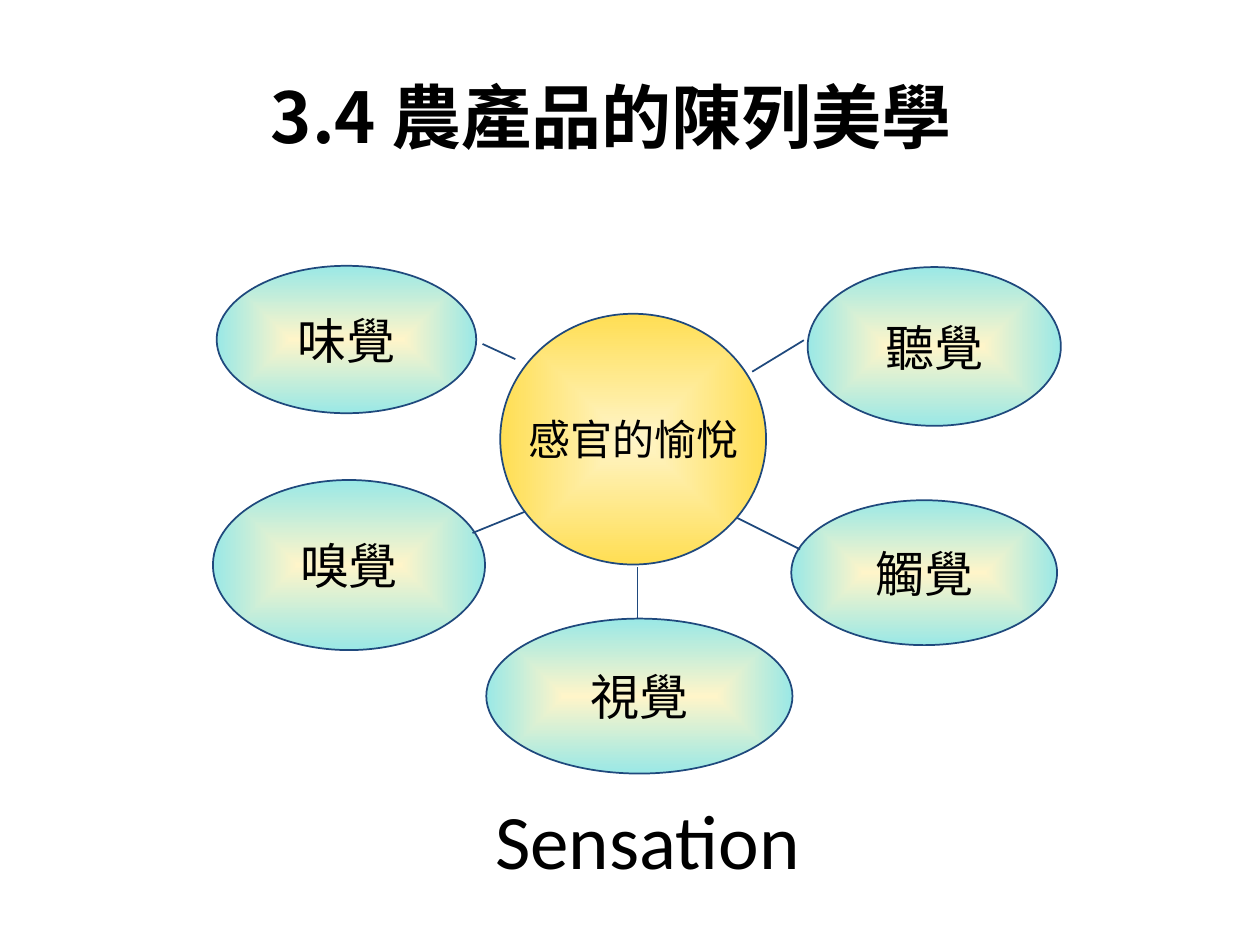
from dataclasses import dataclass

import lxml.etree
import pptx
import pptx.dml.color
import pptx.enum.shapes
import pptx.enum.text
import pptx.oxml
import pptx.oxml.ns
import pptx.util
from pptx.util import Inches

COLORS = {
    "text": "000000",
    "outline": "1F497D",
    "center": "FFF5C9",
    "hub": "FFDE53",
    "sense": "9AE8E6",
}


@dataclass
class Bubble:
    label: str
    box: tuple[float, float, float, float]
    edge: str = "sense"
    size: int = 28


@dataclass
class Sense:
    bubble: Bubble
    start: tuple[float, float]
    end: tuple[float, float]


HUB = Bubble("感官的愉悅", (3.97, 2.49, 2.11, 1.99), "hub", 24)
SENSES = [
    Sense(Bubble("味覺", (1.72, 2.11, 2.06, 1.17)), (3.83, 2.73), (4.09, 2.85)),
    Sense(Bubble("嗅覺", (1.69, 3.81, 2.16, 1.35)), (4.17, 4.06), (3.75, 4.23)),
    Sense(Bubble("視覺", (3.86, 4.91, 2.43, 1.23)), (5.06, 4.5), (5.06, 4.91)),
    Sense(Bubble("觸覺", (6.28, 3.97, 2.11, 1.15)), (5.85, 4.11), (6.35, 4.36)),
    Sense(Bubble("聽覺", (6.41, 2.12, 2.01, 1.26)), (5.97, 2.95), (6.38, 2.7)),
]


def rgb(name: str) -> pptx.dml.color.RGBColor:
    return pptx.dml.color.RGBColor.from_string(COLORS[name])


def write_text(shape, text: str, size: int, font_name: str, bold: bool = False) -> None:
    frame = shape.text_frame
    frame.text = text
    frame.vertical_anchor = pptx.enum.text.MSO_ANCHOR.MIDDLE
    paragraph = frame.paragraphs[0]
    paragraph.alignment = pptx.enum.text.PP_ALIGN.CENTER
    font = paragraph.font
    font.name = font_name
    font.size = pptx.util.Pt(size)
    font.bold = bold
    font.color.rgb = rgb("text")


def set_outline(line) -> None:
    line.color.rgb = rgb("outline")
    line.width = pptx.util.Pt(1)


def fill_from_center(shape, edge: str) -> None:
    shape.fill.gradient()
    for stop, position, color in zip(shape.fill.gradient_stops, (0, 1), ("center", edge)):
        stop.position = position
        stop.color.rgb = rgb(color)
    gradient = shape._element.spPr.find(pptx.oxml.ns.qn("a:gradFill"))
    linear = gradient.find(pptx.oxml.ns.qn("a:lin"))
    shape_gradient = pptx.oxml.parse_xml(
        f'<a:path {pptx.oxml.ns.nsdecls("a")} path="shape">'
        '<a:fillToRect l="50000" t="50000" r="50000" b="50000"/></a:path>'
    )
    gradient.replace(linear, shape_gradient)


def draw_bubble(shapes, bubble: Bubble) -> None:
    shape = shapes.add_shape(
        pptx.enum.shapes.MSO_SHAPE.OVAL, *(Inches(value) for value in bubble.box)
    )
    shape.shadow.inherit = False
    fill_from_center(shape, bubble.edge)
    set_outline(shape.line)
    frame = shape.text_frame
    frame.margin_left = frame.margin_top = frame.margin_right = frame.margin_bottom = 0
    frame.word_wrap = False
    write_text(shape, bubble.label, bubble.size, "Arial")


def draw_sense(shapes, sense: Sense) -> None:
    group = shapes.add_group_shape()
    draw_bubble(group.shapes, sense.bubble)
    connector = group.shapes.add_connector(
        pptx.enum.shapes.MSO_CONNECTOR.STRAIGHT,
        *(Inches(value) for value in sense.start + sense.end),
    )
    set_outline(connector.line)
    lxml.etree.SubElement(connector._element.spPr, pptx.oxml.ns.qn("a:effectLst"))


def main() -> None:
    presentation = pptx.Presentation()
    presentation.slide_width = Inches(10)
    presentation.slide_height = Inches(7.5)
    slide = presentation.slides.add_slide(presentation.slide_layouts[5])

    title = slide.shapes.title
    title.left, title.top = Inches(0.35), Inches(0.29)
    title.width, title.height = Inches(9), Inches(1.25)
    write_text(title, "3.4 農產品的陳列美學", 40, "Noto Sans CJK SC", bold=True)

    draw_bubble(slide.shapes, HUB)
    for sense in SENSES:
        draw_sense(slide.shapes, sense)

    caption = slide.shapes.add_textbox(Inches(2.74), Inches(6.03), Inches(4.8), Inches(1.25))
    caption.text_frame.word_wrap = True
    write_text(caption, "Sensation", 44, "Calibri")

    presentation.save("out.pptx")


if __name__ == "__main__":
    main()
